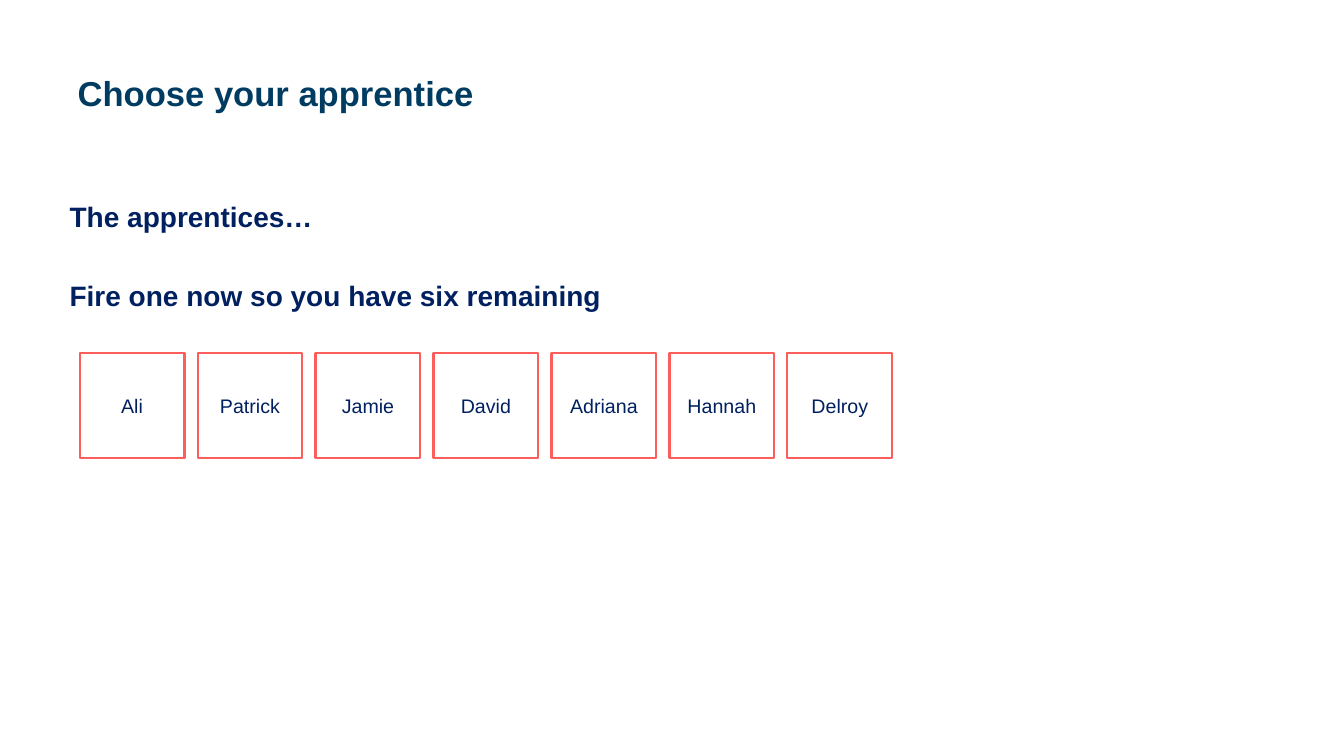
from pptx import Presentation
from pptx.dml.color import RGBColor
from pptx.enum.shapes import MSO_SHAPE as Shape
from pptx.enum.text import MSO_ANCHOR as Anchor, MSO_AUTO_SIZE as Fit, PP_ALIGN as Align
from pptx.oxml.ns import qn
from pptx.util import Inches, Pt

TEAL = RGBColor(0x00, 0x3B, 0x61)
NAVY = RGBColor(0x00, 0x20, 0x60)
CORAL = RGBColor(0xFC, 0x5E, 0x5B)

NAMES = ["Ali", "Patrick", "Jamie", "David", "Adriana", "Hannah", "Delroy"]
LINES = ["The apprentices…", "Fire one now so you have six remaining"]
LEFT, TOP, SIDE, STEP = 0.79, 3.5, 1.04, 1.17


def place(shape, left, top, width, height):
    shape.left, shape.top = Inches(left), Inches(top)
    shape.width, shape.height = Inches(width), Inches(height)


def set_frame(frame, anchor, inset=0.1):
    """Set anchor and vertical insets of a wrapped text frame."""
    frame.word_wrap = True
    frame.auto_size = Fit.NONE
    frame.vertical_anchor = anchor
    frame.margin_left = frame.margin_right = Inches(0.1)
    frame.margin_top = frame.margin_bottom = Inches(inset)


def add_run(para, text, size, color, bold=False):
    run = para.add_run()
    run.text = text
    font = run.font
    font.name, font.size, font.bold = "Arial", Pt(size), bold
    font.color.rgb = color


def add_title(slide, text):
    title = slide.shapes.title
    place(title, 0.67, 0.29, 10.03, 1.25)
    set_frame(title.text_frame, Anchor.MIDDLE, 0.05)
    para = title.text_frame.paragraphs[0]
    para.alignment = Align.LEFT
    add_run(para, text, 24.7, TEAL, True)


def add_body(slide, lines):
    body = slide.placeholders[1]
    place(body, 0.59, 1.65, 9, 1.54)
    frame = body.text_frame
    set_frame(frame, Anchor.TOP)
    frame.margin_top = Inches(0.33)
    for i, line in enumerate(lines):
        para = frame.add_paragraph() if i else frame.paragraphs[0]
        props = para._p.get_or_add_pPr()
        props.set("marL", "0")
        props.set("indent", "0")
        props.append(props.makeelement(qn("a:buNone"), {}))
        para.space_before = Pt(32.5 if i else 0)
        add_run(para, line, 20, NAVY, True)


def add_card(slide, name, left):
    card = slide.shapes.add_shape(
        Shape.RECTANGLE, Inches(left), Inches(TOP), Inches(SIDE), Inches(SIDE))
    card.shadow.inherit = False
    card.fill.background()
    card.line.color.rgb = CORAL
    card.line.width = Pt(1.5)
    set_frame(card.text_frame, Anchor.MIDDLE)
    para = card.text_frame.paragraphs[0]
    para.alignment = Align.CENTER
    add_run(para, name, 14, NAVY)


def main():
    deck = Presentation()
    deck.slide_width, deck.slide_height = Inches(13.33), Inches(7.5)
    slide = deck.slides.add_slide(deck.slide_layouts[1])
    add_title(slide, "Choose your apprentice")
    for i, name in enumerate(NAMES):
        add_card(slide, name, LEFT + i * STEP)
    add_body(slide, LINES)
    deck.save("out.pptx")


if __name__ == "__main__":
    main()
